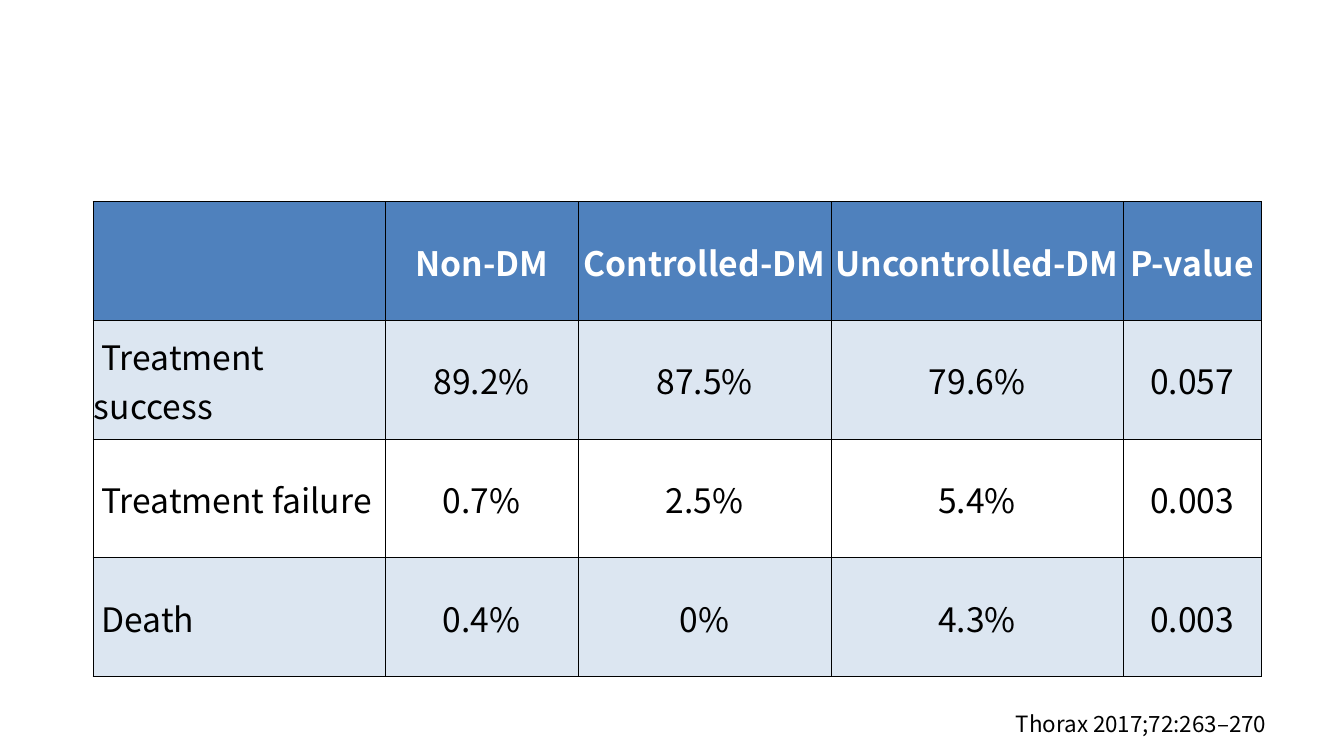
from lxml import etree
from pptx import Presentation
from pptx.dml.color import RGBColor
from pptx.enum import text
from pptx.oxml import ns
from pptx.util import Pt

COLORS = {"header": "4F81BD", "band": "DCE6F1", "ink": "000000", "paper": "FFFFFF"}
FONT = "Noto Sans CJK KR"
CELL_FORMAT = {
    "vertical_anchor": text.MSO_ANCHOR.MIDDLE,
    "margin_left": Pt(0.75),
    "margin_right": Pt(0.75),
    "margin_top": Pt(0.75),
    "margin_bottom": Pt(0),
}
OUTCOMES = [
    ["", "Non-DM", "Controlled-DM", "Uncontrolled-DM", "P-value"],
    ["Treatment success", "89.2%", "87.5%", "79.6%", "0.057"],
    ["Treatment failure", "0.7%", "2.5%", "5.4%", "0.003"],
    ["Death", "0.4%", "0%", "4.3%", "0.003"],
]
ROW_FILLS = ["header", "band", None, "band"]
COLUMN_WIDTHS = [209, 137.5, 180.7, 208.6, 98.7]
ROW_HEIGHT = 84.8


def write(paragraph, words, size, color, bold=False):
    paragraph.text = words
    for name, value in {"name": FONT, "size": Pt(size), "bold": bold}.items():
        setattr(paragraph.font, name, value)
        for run in paragraph.runs:
            setattr(run.font, name, value)
    for run in paragraph.runs:
        run.font.color.rgb = RGBColor.from_string(COLORS[color])


def add_borders(cell):
    properties = cell._tc.get_or_add_tcPr()
    for position, side in enumerate(["lnL", "lnR", "lnT", "lnB"]):
        border = etree.Element(ns.qn(f"a:{side}"), w=str(Pt(0.5)))
        fill = etree.SubElement(border, ns.qn("a:solidFill"))
        etree.SubElement(fill, ns.qn("a:srgbClr"), val=COLORS["ink"])
        properties.insert(position, border)


deck = Presentation()
deck.slide_width, deck.slide_height = Pt(960), Pt(540)
slide = deck.slides.add_slide(deck.slide_layouts[6])

outcome_table = slide.shapes.add_table(
    len(OUTCOMES), len(COLUMN_WIDTHS), Pt(66.4), Pt(144),
    Pt(sum(COLUMN_WIDTHS)), Pt(ROW_HEIGHT * len(OUTCOMES)),
).table
outcome_table.horz_banding = False
for column, width in zip(outcome_table.columns, COLUMN_WIDTHS):
    column.width = Pt(width)

for row_index, (outcome, row_fill) in enumerate(zip(OUTCOMES, ROW_FILLS)):
    outcome_table.rows[row_index].height = Pt(ROW_HEIGHT)
    is_header = row_index == 0
    for column_index, words in enumerate(outcome):
        cell = outcome_table.cell(row_index, column_index)
        for name, value in CELL_FORMAT.items():
            setattr(cell, name, value)
        if row_fill:
            cell.fill.solid()
            cell.fill.fore_color.rgb = RGBColor.from_string(COLORS[row_fill])
        else:
            cell.fill.background()
        add_borders(cell)
        entry = cell.text_frame.paragraphs[0]
        if column_index == 0:
            entry.alignment = text.PP_ALIGN.LEFT
            entry._p.get_or_add_pPr().set("indent", str(Pt(5.4)))
        else:
            entry.alignment = text.PP_ALIGN.CENTER
        write(entry, words, 24, "paper" if is_header else "ink", is_header)

citation = slide.shapes.add_textbox(Pt(718.6), Pt(493.9), Pt(207.4), Pt(32.4)).text_frame
citation.word_wrap = True
citation.auto_size = text.MSO_AUTO_SIZE.SHAPE_TO_FIT_TEXT
citation.paragraphs[0].line_spacing = 1.5
write(citation.paragraphs[0], "Thorax 2017;72:263–270", 16, "ink")

deck.save("out.pptx")
